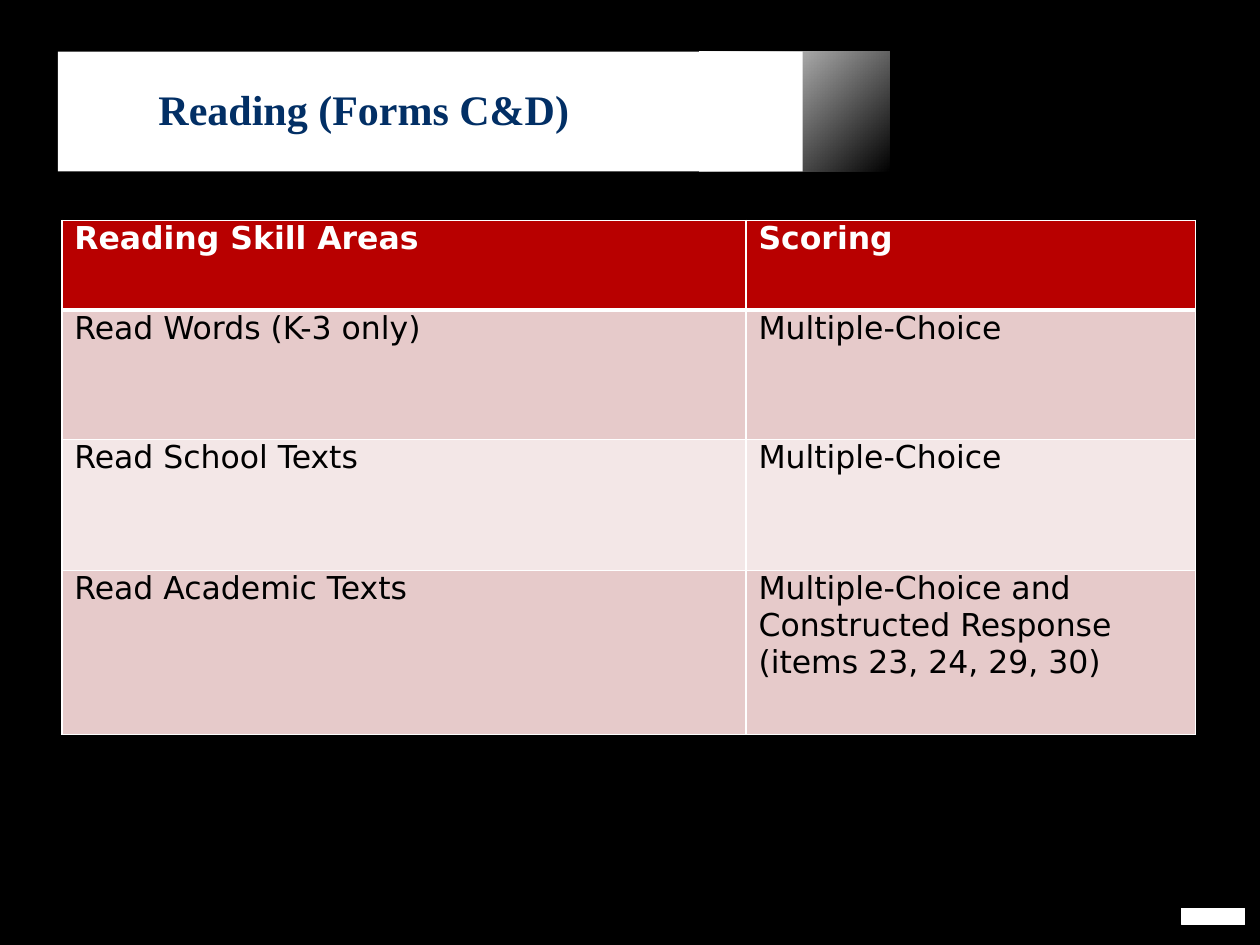
"""Builds the slide on reading skill areas and how each is scored."""
import pptx
import pptx.dml.color
import pptx.enum.shapes
import pptx.enum.text
import pptx.oxml
import pptx.oxml.ns
import pptx.util

COLORS = {"back": "000000", "white": "FFFFFF", "title": "022F65", "header": "B80000",
          "odd": "E6CACA", "even": "F3E7E7", "text": "000000"}
TITLE = "Reading (Forms C&D)"
SKILLS = [
    ("Reading Skill Areas", "Scoring"),
    ("Read Words (K-3 only)", "Multiple-Choice"),
    ("Read School Texts", "Multiple-Choice"),
    ("Read Academic Texts",
     "Multiple-Choice and Constructed Response (items 23, 24, 29, 30)"),
]
COLUMNS = (5.43, 3.57)
ROWS = (0.71, 1.03, 1.04, 1.3)
BAND_TOP, BAND_HEIGHT = 0.41, 0.95
inch = pptx.util.Inches


def rgb(name):
    return pptx.dml.color.RGBColor.from_string(COLORS[name])


def write(frame, text, font="DejaVu Sans", size=18, color="text", bold=False,
          anchor=pptx.enum.text.MSO_ANCHOR.TOP):
    frame.word_wrap = True
    frame.vertical_anchor = anchor
    run = frame.paragraphs[0].add_run()
    run.text = text
    run.font.name, run.font.size = font, pptx.util.Pt(size)
    run.font.bold, run.font.color.rgb = bold, rgb(color)


def add_box(slide, *place):
    box = slide.shapes.add_shape(pptx.enum.shapes.MSO_SHAPE.RECTANGLE, *map(inch, place))
    box.shadow.inherit = False
    box.fill.solid()
    box.fill.fore_color.rgb = rgb("white")
    box.line.fill.background()
    return box


def fade(box):
    box.fill.gradient()
    box.fill.gradient_angle = 315
    for stop in box.fill.gradient_stops:
        stop.color.rgb = rgb("white")
    last_color = box._element.xpath(".//a:gs/a:srgbClr")[-1]
    last_color.append(pptx.oxml.parse_xml(
        f'<a:alpha {pptx.oxml.ns.nsdecls("a")} val="0"/>'))


def set_borders(cell, **widths):
    properties = cell._tc.get_or_add_tcPr()
    for index, side in enumerate("LRTB"):
        width = pptx.util.Pt(widths.get(side, 1))
        properties.insert(index, pptx.oxml.parse_xml(
            f'<a:ln{side} {pptx.oxml.ns.nsdecls("a")} w="{width}"><a:solidFill>'
            f'<a:srgbClr val="{COLORS["white"]}"/></a:solidFill></a:ln{side}>'))


def add_skill_table(slide, left, top):
    table = slide.shapes.add_table(len(ROWS), len(COLUMNS), inch(left), inch(top),
                                   inch(sum(COLUMNS)), inch(sum(ROWS))).table
    for column, width in zip(table.columns, COLUMNS):
        column.width = inch(width)
    for r, (height, texts) in enumerate(zip(ROWS, SKILLS)):
        table.rows[r].height = inch(height)
        header = r == 0
        borders = {0: {"B": 3}, 1: {"T": 3}}.get(r, {})
        for c, text in enumerate(texts):
            cell = table.cell(r, c)
            cell.margin_left = inch(0.1)
            cell.margin_right = cell.margin_top = cell.margin_bottom = 0
            cell.fill.solid()
            cell.fill.fore_color.rgb = rgb("header" if header else "odd" if r % 2 else "even")
            set_borders(cell, **borders)
            write(cell.text_frame, text, color="white" if header else "text", bold=header)


def main():
    deck = pptx.Presentation()
    deck.slide_width, deck.slide_height = inch(10), inch(7.5)
    slide = deck.slides.add_slide(deck.slide_layouts[6])
    slide.background.fill.solid()
    slide.background.fill.fore_color.rgb = rgb("back")

    fade(add_box(slide, 5.55, BAND_TOP, 1.51, BAND_HEIGHT))
    add_box(slide, 0.46, BAND_TOP, 5.91, BAND_HEIGHT)
    page_mark = add_box(slide, 9.38, 7.21, 0.5, 0.13)
    page_mark.line.color.rgb = rgb("white")
    page_mark.line.width = pptx.util.Pt(0.75)

    title = slide.shapes.add_textbox(inch(1.16), inch(0.53), inch(7.03), inch(0.66))
    write(title.text_frame, TITLE, font="Times New Roman", size=24, color="title",
          bold=True, anchor=pptx.enum.text.MSO_ANCHOR.MIDDLE)
    add_skill_table(slide, 0.49, 1.75)
    deck.save("out.pptx")


if __name__ == "__main__":
    main()
